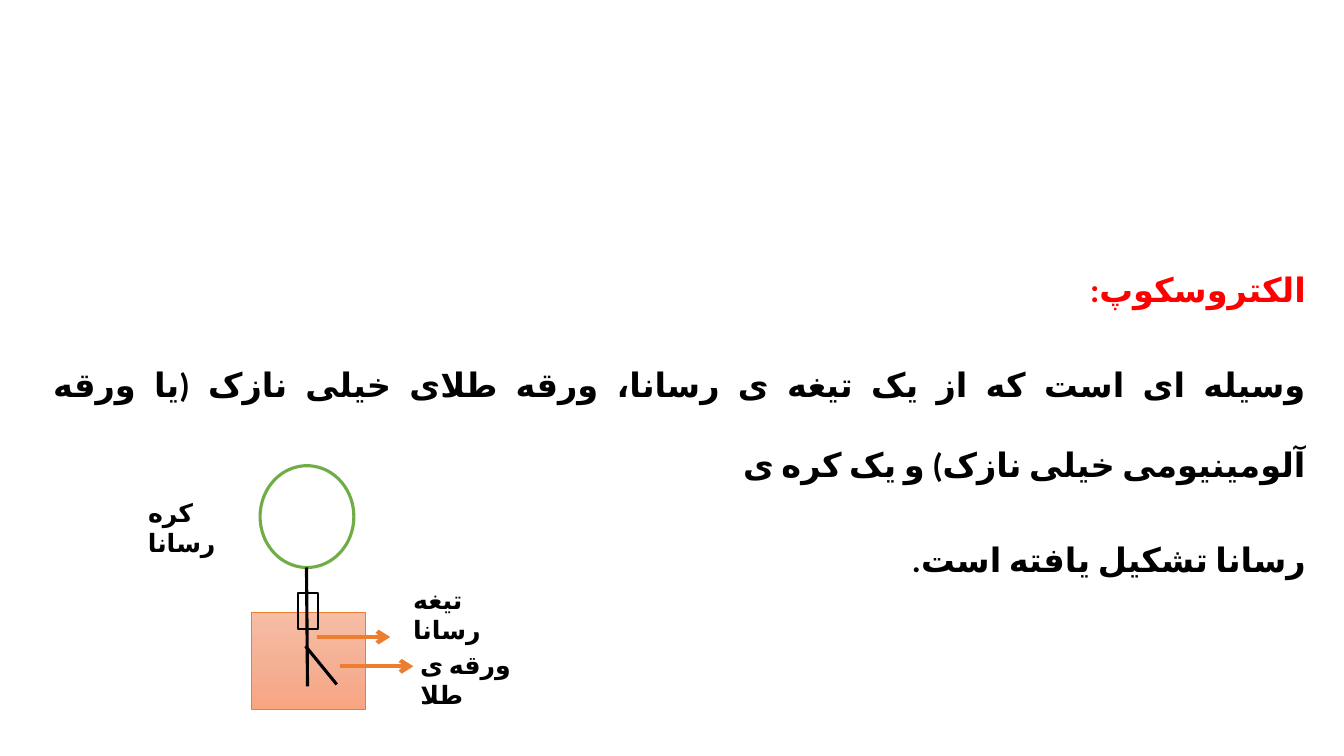
from dataclasses import dataclass
from copy import deepcopy

from lxml.etree import SubElement
from pptx import Presentation
from pptx.dml.color import RGBColor
from pptx.enum.shapes import MSO_CONNECTOR, MSO_SHAPE
from pptx.enum.text import MSO_ANCHOR, MSO_AUTO_SIZE, PP_ALIGN
from pptx.oxml.ns import qn
from pptx.util import Inches, Pt


@dataclass(frozen=True)
class Theme:
    font: str = "Calibri"
    language: str = "fa-IR"
    body_size: int = 24
    label_size: int = 18
    heading: str = "FF0000"
    ink: str = "000000"
    paper: str = "FFFFFF"
    sphere: str = "70AD47"
    accent: str = "ED7D31"
    jar: tuple = ((0, "F7BDA5"), (0.5, "F5B196"), (1, "F8A582"))


@dataclass(frozen=True)
class Box:
    """A region in inches, ruled into a grid of 100 cells per inch."""
    left: float
    top: float
    width: float
    height: float

    def point(self, column, row):
        return Inches(self.left + column / 100), Inches(self.top + row / 100)

    def area(self, column, row, columns, rows):
        return *self.point(column, row), Inches(columns / 100), Inches(rows / 100)

    def whole(self):
        return self.area(0, 0, self.width * 100, self.height * 100)


THEME = Theme()
SLIDE = Box(0, 0, 13.33, 7.5)
DEFINITION = Box(0.43, 2.22, 12.62, 3.75)
ELECTROSCOPE = Box(1.37, 4.62, 3.86, 2.42)

PARAGRAPHS = (
    ("الکتروسکوپ:", THEME.heading),
    ("وسیله ای است که از یک تیغه ی رسانا، ورقه طلای خیلی نازک "
     "(یا ورقه آلومینیومی خیلی نازک) و یک کره ی", THEME.ink),
    ("رسانا تشکیل یافته است.", THEME.ink),
)
LABELS = (
    ("کره رسانا", (0, 26, 103, 40)),
    ("تیغه رسانا", (263, 113, 110, 40)),
    ("ورقه ی طلا", (270, 177, 116, 40)),
)
RODS = (((167, 101), (168, 219)), ((166, 179), (197, 217)))
ARROW_STARTS = ((177, 170), (200, 199))
ARROW_LENGTH = 73


def apply_format(target, values):
    for name, value in values.items():
        setattr(target, name, value)


def style_line(line, color, width):
    line.color.rgb = RGBColor.from_string(color)
    line.width = Pt(width)


def add_text_frame(slide, area):
    frame = slide.shapes.add_textbox(*area).text_frame
    apply_format(frame, {"word_wrap": True, "auto_size": MSO_AUTO_SIZE.SHAPE_TO_FIT_TEXT,
                         "vertical_anchor": MSO_ANCHOR.TOP})
    return frame


def write(paragraph, text, size, color):
    """Add a bold run whose font also covers Persian letters."""
    run = paragraph.add_run()
    run.text = text
    apply_format(run.font, {"name": THEME.font, "size": Pt(size), "bold": True})
    run.font.color.rgb = RGBColor.from_string(color)
    properties = run._r.get_or_add_rPr()
    properties.set("lang", THEME.language)
    SubElement(properties, qn("a:cs"), typeface=THEME.font)


def add_outline(slide, kind, area, color, width):
    shape = slide.shapes.add_shape(kind, *area)
    shape.shadow.inherit = False
    shape.fill.background()
    style_line(shape.line, color, width)
    return shape


def add_line(slide, start, end, color, width, arrow=False):
    connector = slide.shapes.add_connector(MSO_CONNECTOR.STRAIGHT, *start, *end)
    style_line(connector.line, color, width)
    properties = connector.element.spPr
    if arrow:
        SubElement(properties.find(qn("a:ln")), qn("a:tailEnd"), type="arrow")
    SubElement(properties, qn("a:effectLst"))


def fill_gradient(shape, colors):
    """Fill from top to bottom through three colours."""
    shape.fill.gradient()
    shape.fill.gradient_angle = 270
    stops = shape.element.spPr.find(qn("a:gradFill")).find(qn("a:gsLst"))
    stops.append(deepcopy(stops[0]))
    for stop, (position, color) in zip(shape.fill.gradient_stops, colors):
        stop.position = position
        stop.color.rgb = RGBColor.from_string(color)


def add_definition(slide, box):
    frame = add_text_frame(slide, box.whole())
    for index, (text, color) in enumerate(PARAGRAPHS):
        paragraph = frame.add_paragraph() if index else frame.paragraphs[0]
        apply_format(paragraph, {"alignment": PP_ALIGN.JUSTIFY, "line_spacing": 2.0,
                                 "space_after": Pt(10)})
        paragraph._p.get_or_add_pPr().set("rtl", "1")
        write(paragraph, text, THEME.body_size, color)


def add_electroscope(slide, box):
    sphere = add_outline(slide, MSO_SHAPE.OVAL, box.area(121, 0, 93, 101), THEME.sphere, 2.25)
    sphere.fill.solid()
    sphere.fill.fore_color.rgb = RGBColor.from_string(THEME.paper)
    jar = add_outline(slide, MSO_SHAPE.RECTANGLE, box.area(112, 146, 113, 96), THEME.accent, 0.5)
    fill_gradient(jar, THEME.jar)
    for start, end in RODS:
        add_line(slide, box.point(*start), box.point(*end), THEME.ink, 2.25)
    add_outline(slide, MSO_SHAPE.RECTANGLE, box.area(159, 126, 19, 36), THEME.ink, 1.5)
    for text, cells in LABELS:
        frame = add_text_frame(slide, box.area(*cells))
        write(frame.paragraphs[0], text, THEME.label_size, THEME.ink)
    for column, row in ARROW_STARTS:
        add_line(slide, box.point(column, row), box.point(column + ARROW_LENGTH, row),
                 THEME.accent, 3, arrow=True)


def main():
    presentation = Presentation()
    apply_format(presentation, {"slide_width": Inches(SLIDE.width),
                                "slide_height": Inches(SLIDE.height)})
    slide = presentation.slides.add_slide(presentation.slide_layouts.get_by_name("Blank"))
    add_definition(slide, DEFINITION)
    add_electroscope(slide, ELECTROSCOPE)
    presentation.save("out.pptx")


if __name__ == "__main__":
    main()
